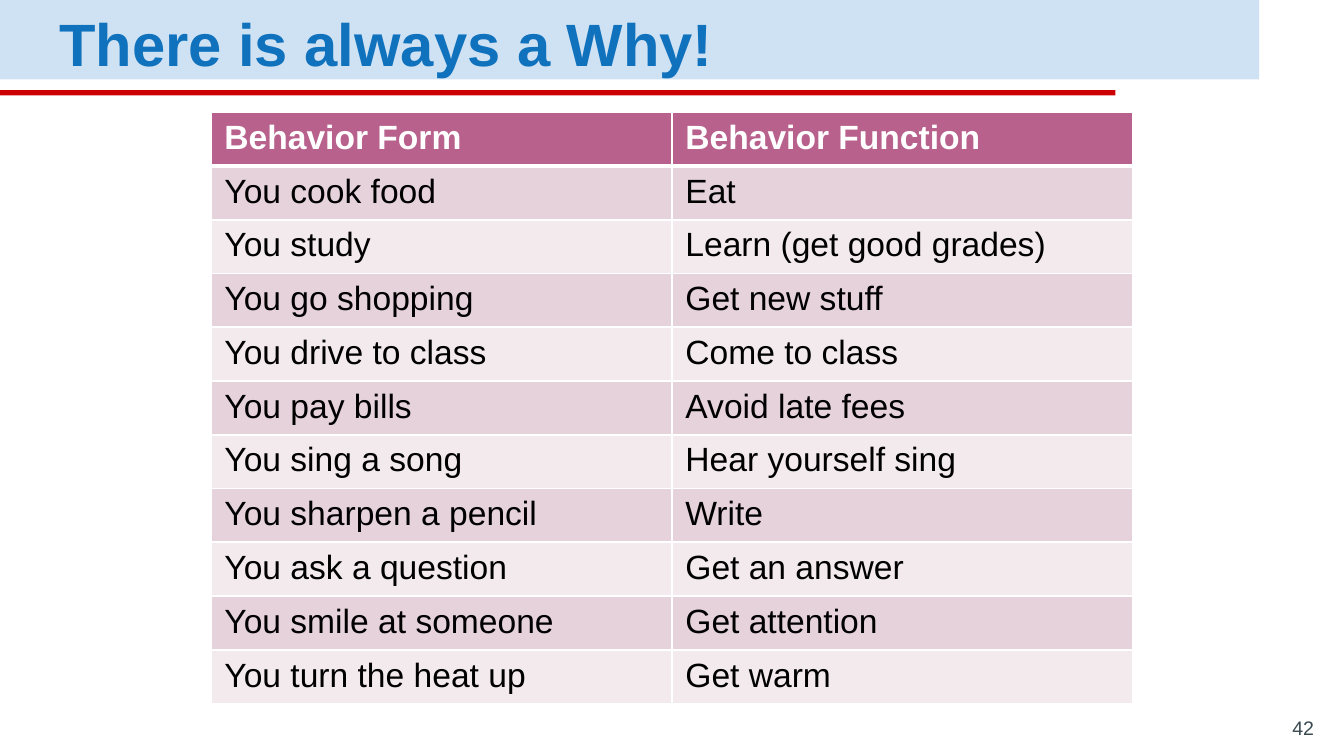
from lxml.etree import SubElement
from pptx import Presentation
from pptx.dml.color import RGBColor
from pptx.enum.shapes import MSO_SHAPE
from pptx.enum.text import MSO_ANCHOR, MSO_AUTO_SIZE, PP_ALIGN
from pptx.oxml.ns import qn
from pptx.util import Emu, Pt

EMU_PER_PX = 4572  # 200 px to the inch

WHITE = RGBColor(0xFF, 0xFF, 0xFF)
BLACK = RGBColor(0x00, 0x00, 0x00)
PALE_BLUE = RGBColor(0xCF, 0xE2, 0xF3)
TITLE_BLUE = RGBColor(0x10, 0x71, 0xBD)
RED = RGBColor(0xCC, 0x00, 0x00)
SLATE = RGBColor(0x3A, 0x49, 0x50)
PLUM = RGBColor(0xB7, 0x61, 0x8C)
ROSE = RGBColor(0xE6, 0xD2, 0xDA)
PALE_ROSE = RGBColor(0xF3, 0xEA, 0xEE)

BEHAVIORS = [
    ("Behavior Form", "Behavior Function"),
    ("You cook food", "Eat"),
    ("You study", "Learn (get good grades)"),
    ("You go shopping", "Get new stuff"),
    ("You drive to class", "Come to class"),
    ("You pay bills", "Avoid late fees"),
    ("You sing a song", "Hear yourself sing"),
    ("You sharpen a pencil", "Write"),
    ("You ask a question", "Get an answer"),
    ("You smile at someone", "Get attention"),
    ("You turn the heat up", "Get warm"),
]


def px(length):
    return Emu(length * EMU_PER_PX)


def write(frame, text, size=18, color=BLACK, bold=False, align=PP_ALIGN.LEFT,
          font="Arial", line_spacing=None, space_after=None):
    paragraph = frame.paragraphs[0]
    paragraph.alignment = align
    if line_spacing is not None:
        paragraph.line_spacing = line_spacing
    if space_after is not None:
        paragraph.space_after = Pt(space_after)
    run = paragraph.add_run()
    run.text = text
    run.font.name = font
    run.font.size = Pt(size)
    run.font.bold = bold
    run.font.color.rgb = color


def set_borders(cell, color, **widths):
    """Draw the cell's L, R, T and B borders, with widths in points."""
    properties = cell._tc.get_or_add_tcPr()
    for position, side in enumerate("LRTB"):
        border = SubElement(properties, qn(f"a:ln{side}"), w=str(Pt(widths[side])))
        fill = SubElement(border, qn("a:solidFill"))
        SubElement(fill, qn("a:srgbClr"), val=str(color))
        properties.insert(position, border)


class SlideBuilder:
    def __init__(self, slide):
        self.slide = slide

    def bar(self, left, top, width, height, color):
        bar = self.slide.shapes.add_shape(
            MSO_SHAPE.RECTANGLE, px(left), px(top), px(width), px(height))
        bar.shadow.inherit = False
        bar.fill.solid()
        bar.fill.fore_color.rgb = color
        bar.line.fill.background()

    def frame(self, shape, anchor):
        frame = shape.text_frame
        frame.word_wrap = True
        frame.auto_size = MSO_AUTO_SIZE.NONE
        frame.vertical_anchor = anchor
        frame.margin_left = frame.margin_right = px(20)
        frame.margin_top = frame.margin_bottom = px(20)
        return frame

    def title(self, text, left, top, width, height):
        heading = self.slide.shapes.title
        heading.left, heading.top = px(left), px(top)
        heading.width, heading.height = px(width), px(height)
        # Bring the heading in front of the bars.
        self.slide.shapes._spTree.append(heading._element)
        write(self.frame(heading, MSO_ANCHOR.MIDDLE), text, size=32,
              color=TITLE_BLUE, bold=True, line_spacing=1.15, space_after=16)

    def page_number(self, text, left, top, width, height):
        number = self.slide.shapes.add_textbox(
            px(left), px(top), px(width), px(height))
        write(self.frame(number, MSO_ANCHOR.BOTTOM), text, size=10.5,
              color=SLATE, align=PP_ALIGN.RIGHT)

    def table(self, rows, left, top, column_width, row_height):
        columns = len(rows[0])
        table = self.slide.shapes.add_table(
            len(rows), columns, px(left), px(top),
            px(column_width * columns), px(row_height * len(rows))).table
        for row in table.rows:
            row.height = px(row_height)
        for r, texts in enumerate(rows):
            header = r == 0
            band = PLUM if header else ROSE if r % 2 else PALE_ROSE
            for c, text in enumerate(texts):
                cell = table.cell(r, c)
                cell.fill.solid()
                cell.fill.fore_color.rgb = band
                set_borders(cell, WHITE, L=1, R=1,
                            T=3 if r == 1 else 1, B=3 if header else 1)
                write(cell.text_frame, text, bold=header,
                      color=WHITE if header else BLACK)


def main():
    presentation = Presentation()
    presentation.slide_width, presentation.slide_height = px(2000), px(1125)
    title_only = presentation.slide_layouts[5]
    builder = SlideBuilder(presentation.slides.add_slide(title_only))
    builder.bar(0, 0, 1874, 118, PALE_BLUE)
    builder.bar(0, 134, 1660, 8, RED)
    builder.title("There is always a Why!", 68, 6, 1806, 98)
    builder.page_number("42", 1855, 1069, 120, 52)
    builder.table(BEHAVIORS, 314, 167, column_width=686, row_height=80)
    presentation.save("out.pptx")


if __name__ == "__main__":
    main()
